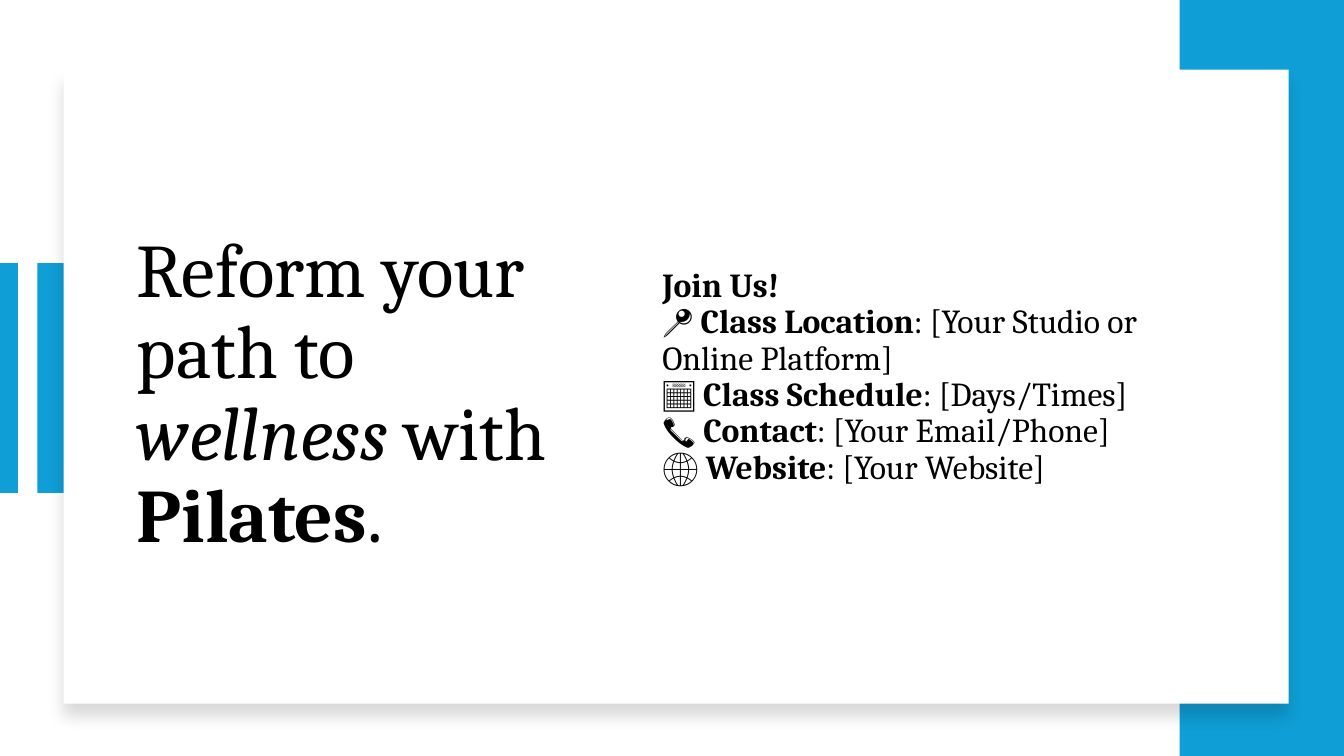
from lxml import etree
from pptx import Presentation
from pptx.dml.color import RGBColor
from pptx.enum.shapes import MSO_CONNECTOR, MSO_SHAPE
from pptx.enum.text import MSO_ANCHOR
from pptx.oxml import parse_xml
from pptx.oxml.ns import nsdecls, qn
from pptx.util import Inches, Pt

BLUE, WHITE, BLACK = "0F9ED5", "FFFFFF", "000000"

deck = Presentation()
deck.slide_width, deck.slide_height = Inches(13.33), Inches(7.5)
page = deck.slides.add_slide(deck.slide_layouts[6])


def color(value):
    return RGBColor.from_string(value)


def add_text(left, width, size, lines, bottom=0.05):
    box = page.shapes.add_textbox(Inches(left), Inches(1.36), Inches(width), Inches(5.12))
    frame = box.text_frame
    frame.word_wrap = True
    frame.vertical_anchor = MSO_ANCHOR.MIDDLE
    frame.margin_bottom = Inches(bottom)
    para = frame.paragraphs[0]
    para.line_spacing = 0.9
    for number, line in enumerate(lines):
        if number:
            para.add_line_break()
        for text, style in line:
            span = para.add_run()
            span.text = text
            span.font.name = "Cambria"
            span.font.size = Pt(size)
            span.font.color.rgb = color(BLACK)
            span.font.bold = style == "bold"
            span.font.italic = style == "italic"


stripe = page.shapes.add_connector(
    MSO_CONNECTOR.STRAIGHT, Inches(0.08), Inches(2.61), Inches(0.08), Inches(4.89))
stripe.line.color.rgb = color(BLUE)
stripe.line.width = Pt(14)
etree.SubElement(stripe._element.spPr, qn("a:effectLst"))

for left, top, width, height, fill in [
    (0.37, 2.61, 0.34, 2.28, BLUE),
    (11.7, 0, 1.63, 7.5, BLUE),
    (0.63, 0.69, 12.15, 6.29, WHITE),
]:
    panel = page.shapes.add_shape(
        MSO_SHAPE.RECTANGLE, Inches(left), Inches(top), Inches(width), Inches(height))
    panel.fill.solid()
    panel.fill.fore_color.rgb = color(fill)
    panel.line.fill.background()
    panel.shadow.inherit = False

panel._element.spPr.find(qn("a:effectLst")).append(parse_xml(
    f'<a:outerShdw {nsdecls("a")} blurRad="{Pt(11)}" dist="{Pt(10)}" dir="5400000" '
    f'algn="t" rotWithShape="0"><a:srgbClr val="{BLACK}"><a:alpha val="15000"/>'
    '</a:srgbClr></a:outerShdw>'))

add_text(1.26, 4.58, 54, [[
    ("Reform your path to ", "plain"),
    ("wellness", "italic"),
    (" with ", "plain"),
    ("Pilates", "bold"),
    (".", "plain"),
]])

details = [
    ("📍", "Class Location", "[Your Studio or Online Platform]"),
    ("📅", "Class Schedule", "[Days/Times]"),
    ("📞", "Contact", "[Your Email/Phone]"),
    ("🌐", "Website", "[Your Website]"),
]
invitation = [[("Join Us!", "bold")]]
for icon, label, value in details:
    invitation.append([(f"{icon} ", "plain"), (label, "bold"), (f": {value}", "plain")])
add_text(6.47, 5.85, 24, invitation, bottom=0.4)

deck.save("out.pptx")
